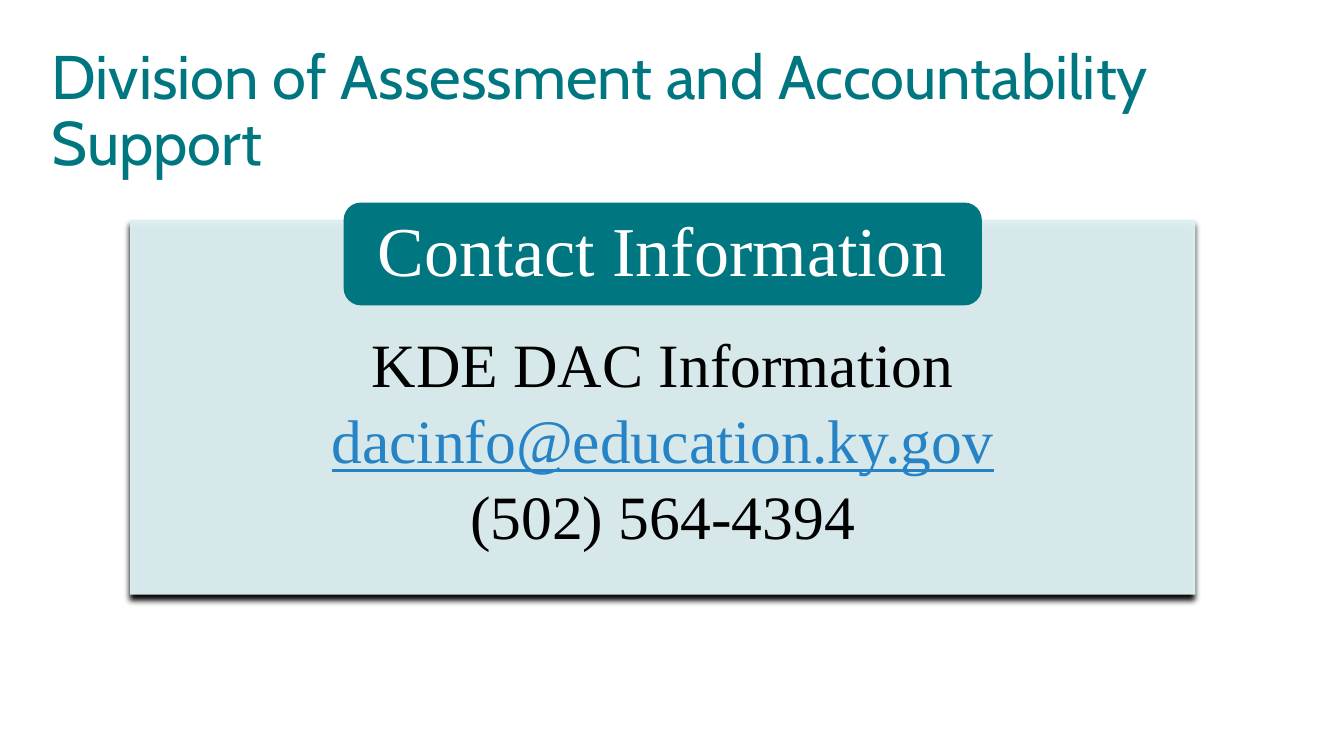
"""Build the contact information slide."""
from lxml import etree
from pptx import Presentation
from pptx.dml.color import RGBColor
from pptx.enum.shapes import MSO_SHAPE
from pptx.enum.text import MSO_ANCHOR, MSO_AUTO_SIZE, PP_ALIGN
from pptx.oxml import parse_xml
from pptx.oxml.ns import nsdecls, qn
from pptx.util import Pt

TITLE = "Division of Assessment and Accountability Support"
HEADING = "Contact Information"
CONTACT_LINES = ["KDE DAC Information", "dacinfo@education.ky.gov", "(502) 564-4394"]
EMAIL_INDEX = 1

COLORS = {"teal": "007780", "panel": "DEF0F2", "email": "2683C6",
          "black": "000000", "white": "FFFFFF"}
TITLE_FONT, BODY_FONT = "Cabin", "Times New Roman"
TITLE_ONLY = 5
RECTANGLE, ROUNDED = MSO_SHAPE.RECTANGLE, MSO_SHAPE.ROUNDED_RECTANGLE
LEFT, CENTER = PP_ALIGN.LEFT, PP_ALIGN.CENTER
TOP, MIDDLE = MSO_ANCHOR.TOP, MSO_ANCHOR.MIDDLE
NO_AUTOFIT = MSO_AUTO_SIZE.NONE

SLIDE_SIZE = (960, 540)
TITLE_BOX = (29.5, 28.1, 900.7, 104.4)
PANEL_BOX = (92.9, 157, 761, 267.8)
HEADING_BOX = (245.5, 144.7, 455.8, 73.4)
PANEL_INSETS = (59, 82.1, 59, 24.5)
HEADING_INSETS = (8, 0, 8, 0)


def write_text(shape, lines, font, size, color, alignment, anchor, insets=None, gap=0):
    frame = shape.text_frame
    frame.text = "\n".join(lines)
    frame.word_wrap = True
    frame.auto_size = NO_AUTOFIT
    frame.vertical_anchor = anchor
    if insets:
        (frame.margin_left, frame.margin_top,
         frame.margin_right, frame.margin_bottom) = map(Pt, insets)
    for paragraph in frame.paragraphs:
        paragraph.alignment = alignment
        paragraph.line_spacing = 0.9
        paragraph.space_before = Pt(0)
        paragraph.space_after = Pt(gap)
        for run in paragraph.runs:
            run.font.name = font
            run.font.size = Pt(size)
            run.font.color.rgb = RGBColor.from_string(COLORS[color])
    return frame


def add_box(slide, kind, box, fill):
    shape = slide.shapes.add_shape(kind, *map(Pt, box))
    shape.shadow.inherit = False
    shape.fill.solid()
    shape.fill.fore_color.rgb = RGBColor.from_string(COLORS[fill])
    shape.line.fill.background()
    return shape


def add_panel_effects(shape):
    properties = shape.element.spPr
    fill_color = properties.find(qn("a:solidFill")).find(qn("a:srgbClr"))
    etree.SubElement(fill_color, qn("a:alpha"), val="97000")
    properties.find(qn("a:effectLst")).append(parse_xml(
        f'<a:outerShdw {nsdecls("a")} blurRad="{Pt(4)}" dist="{Pt(4)}" dir="5400000" '
        f'algn="ctr" rotWithShape="0"><a:srgbClr val="{COLORS["black"]}"/></a:outerShdw>'))


def main():
    presentation = Presentation()
    presentation.slide_width, presentation.slide_height = map(Pt, SLIDE_SIZE)
    slide = presentation.slides.add_slide(presentation.slide_layouts[TITLE_ONLY])

    title = slide.shapes.title
    title.left, title.top, title.width, title.height = map(Pt, TITLE_BOX)
    write_text(title, [TITLE], TITLE_FONT, 44, "teal", LEFT, MIDDLE)

    panel = add_box(slide, RECTANGLE, PANEL_BOX, "panel")
    add_panel_effects(panel)
    contact = write_text(panel, CONTACT_LINES, BODY_FONT, 44, "black", CENTER, TOP,
                         PANEL_INSETS, gap=6.5)
    email_font = contact.paragraphs[EMAIL_INDEX].runs[0].font
    email_font.color.rgb = RGBColor.from_string(COLORS["email"])
    email_font.underline = True

    heading = add_box(slide, ROUNDED, HEADING_BOX, "teal")
    write_text(heading, [HEADING], BODY_FONT, 50, "white", CENTER, MIDDLE, HEADING_INSETS)

    presentation.save("out.pptx")


if __name__ == "__main__":
    main()
